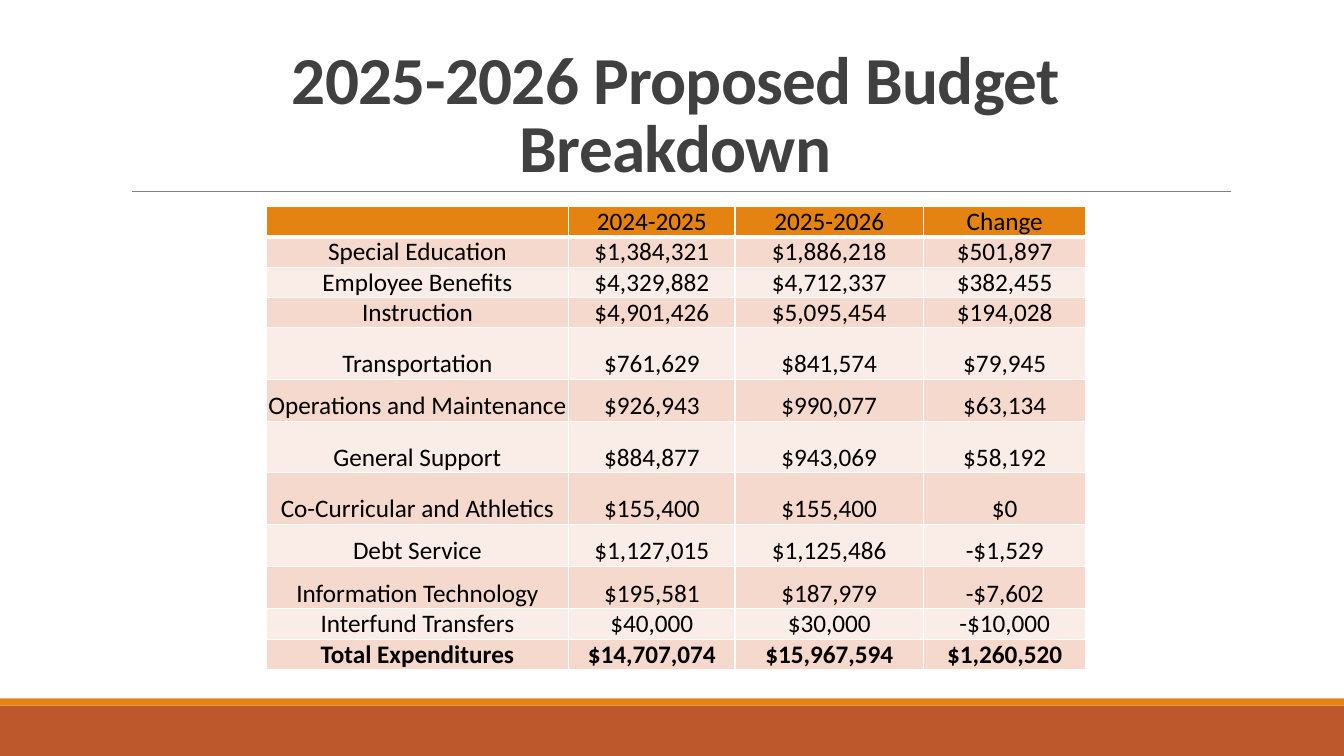
from typing import NamedTuple

from lxml.etree import SubElement
from pptx import Presentation
from pptx.dml.color import RGBColor
from pptx.enum.shapes import MSO_CONNECTOR, MSO_SHAPE
from pptx.enum.text import MSO_ANCHOR, PP_ALIGN
from pptx.oxml.ns import qn
from pptx.slide import Slide
from pptx.table import _Cell
from pptx.util import Inches, Pt

COLORS = {
    "rust": "BD582C",
    "orange": "E48312",
    "rule": "808080",
    "title": "404040",
    "text": "000000",
    "border": "FFFFFF",
    "dark band": "F5D9CC",
    "light band": "FAEDE7",
}
FONT = "Calibri"
SLIDE_WIDTH, SLIDE_HEIGHT = 13.33, 7.5
COLUMN_WIDTHS = (3, 1.65, 1.87, 1.61)
SHORT, MEDIUM, TALL = 0.28, 0.42, 0.51


class Band(NamedTuple):
    top: float
    height: float
    color: str


class BudgetRow(NamedTuple):
    label: str
    previous: str
    proposed: str
    change: str
    height: float = SHORT


FOOTER_BANDS = (Band(7, 0.5, "rust"), Band(6.93, 0.07, "orange"))
BUDGET = (
    BudgetRow("", "2024-2025", "2025-2026", "Change"),
    BudgetRow("Special Education", "$1,384,321", "$1,886,218", "$501,897"),
    BudgetRow("Employee Benefits", "$4,329,882", "$4,712,337", "$382,455"),
    BudgetRow("Instruction", "$4,901,426", "$5,095,454", "$194,028"),
    BudgetRow("Transportation", "$761,629", "$841,574", "$79,945", TALL),
    BudgetRow("Operations and Maintenance", "$926,943", "$990,077", "$63,134", MEDIUM),
    BudgetRow("General Support", "$884,877", "$943,069", "$58,192", TALL),
    BudgetRow("Co-Curricular and Athletics", "$155,400", "$155,400", "$0", TALL),
    BudgetRow("Debt Service", "$1,127,015", "$1,125,486", "-$1,529", MEDIUM),
    BudgetRow("Information Technology", "$195,581", "$187,979", "-$7,602", MEDIUM),
    BudgetRow("Interfund Transfers", "$40,000", "$30,000", "-$10,000"),
    BudgetRow("Total Expenditures", "$14,707,074", "$15,967,594", "$1,260,520"),
)


def rgb(name: str) -> RGBColor:
    return RGBColor.from_string(COLORS[name])


def add_band(slide: Slide, band: Band) -> None:
    shape = slide.shapes.add_shape(
        MSO_SHAPE.RECTANGLE, 0, Inches(band.top), Inches(SLIDE_WIDTH), Inches(band.height)
    )
    shape.shadow.inherit = False
    shape.fill.solid()
    shape.fill.fore_color.rgb = rgb(band.color)
    shape.line.fill.background()


def add_title_rule(slide: Slide) -> None:
    rule = slide.shapes.add_connector(
        MSO_CONNECTOR.STRAIGHT, Inches(1.31), Inches(1.9), Inches(12.21), Inches(1.9)
    )
    rule.line.color.rgb = rgb("rule")
    rule.line.width = Pt(0.5)
    SubElement(rule._element.spPr, qn("a:effectLst"))


def add_title(slide: Slide, text: str) -> None:
    box = slide.shapes.add_textbox(Inches(1.2), Inches(0.31), Inches(11), Inches(1.59))
    frame = box.text_frame
    frame.word_wrap = True
    frame.vertical_anchor = MSO_ANCHOR.BOTTOM
    paragraph = frame.paragraphs[0]
    paragraph.alignment = PP_ALIGN.CENTER
    paragraph.line_spacing = 0.85
    paragraph.font.name = FONT
    paragraph.font.size = Pt(48)
    paragraph.font.bold = True
    paragraph.font.color.rgb = rgb("title")
    run = paragraph.add_run()
    run.text = text
    run._r.get_or_add_rPr().set("spc", "-50")


def set_borders(cell: _Cell, top: float, bottom: float) -> None:
    """Draw the four cell borders; widths are in points."""
    properties = cell._tc.get_or_add_tcPr()
    for tag, width in (("a:lnL", 1), ("a:lnR", 1), ("a:lnT", top), ("a:lnB", bottom)):
        line = SubElement(properties, qn(tag), w=str(Pt(width)))
        fill = SubElement(line, qn("a:solidFill"))
        SubElement(fill, qn("a:srgbClr"), val=COLORS["border"])


def fill_cell(cell: _Cell, text: str, fill: str, bold: bool) -> None:
    cell.fill.solid()
    cell.fill.fore_color.rgb = rgb(fill)
    cell.margin_left = cell.margin_right = cell.margin_top = cell.margin_bottom = 0
    cell.vertical_anchor = MSO_ANCHOR.BOTTOM
    cell.text = text
    paragraph = cell.text_frame.paragraphs[0]
    paragraph.alignment = PP_ALIGN.CENTER
    paragraph.font.name = FONT
    paragraph.font.size = Pt(18)
    paragraph.font.bold = bold
    paragraph.font.color.rgb = rgb("text")


def add_budget_table(slide: Slide) -> None:
    table = slide.shapes.add_table(
        len(BUDGET), len(COLUMN_WIDTHS), Inches(2.64), Inches(2.05),
        Inches(sum(COLUMN_WIDTHS)), Inches(sum(row.height for row in BUDGET)),
    ).table
    table.first_row = table.horz_banding = False
    for column, width in zip(table.columns, COLUMN_WIDTHS):
        column.width = Inches(width)
    last = len(BUDGET) - 1
    for index, budget_row in enumerate(BUDGET):
        table.rows[index].height = Inches(budget_row.height)
        band = "dark band" if index % 2 else "light band"
        fill = "orange" if index == 0 else band
        for cell, text in zip(table.rows[index].cells, budget_row[:4]):
            set_borders(cell, top=3 if index == 1 else 1, bottom=3 if index == 0 else 1)
            fill_cell(cell, text, fill, bold=index == last)


def main() -> None:
    presentation = Presentation()
    presentation.slide_width = Inches(SLIDE_WIDTH)
    presentation.slide_height = Inches(SLIDE_HEIGHT)
    slide = presentation.slides.add_slide(presentation.slide_layouts[6])
    for band in FOOTER_BANDS:
        add_band(slide, band)
    add_title_rule(slide)
    add_title(slide, "2025-2026 Proposed Budget Breakdown")
    add_budget_table(slide)
    presentation.save("out.pptx")


if __name__ == "__main__":
    main()
